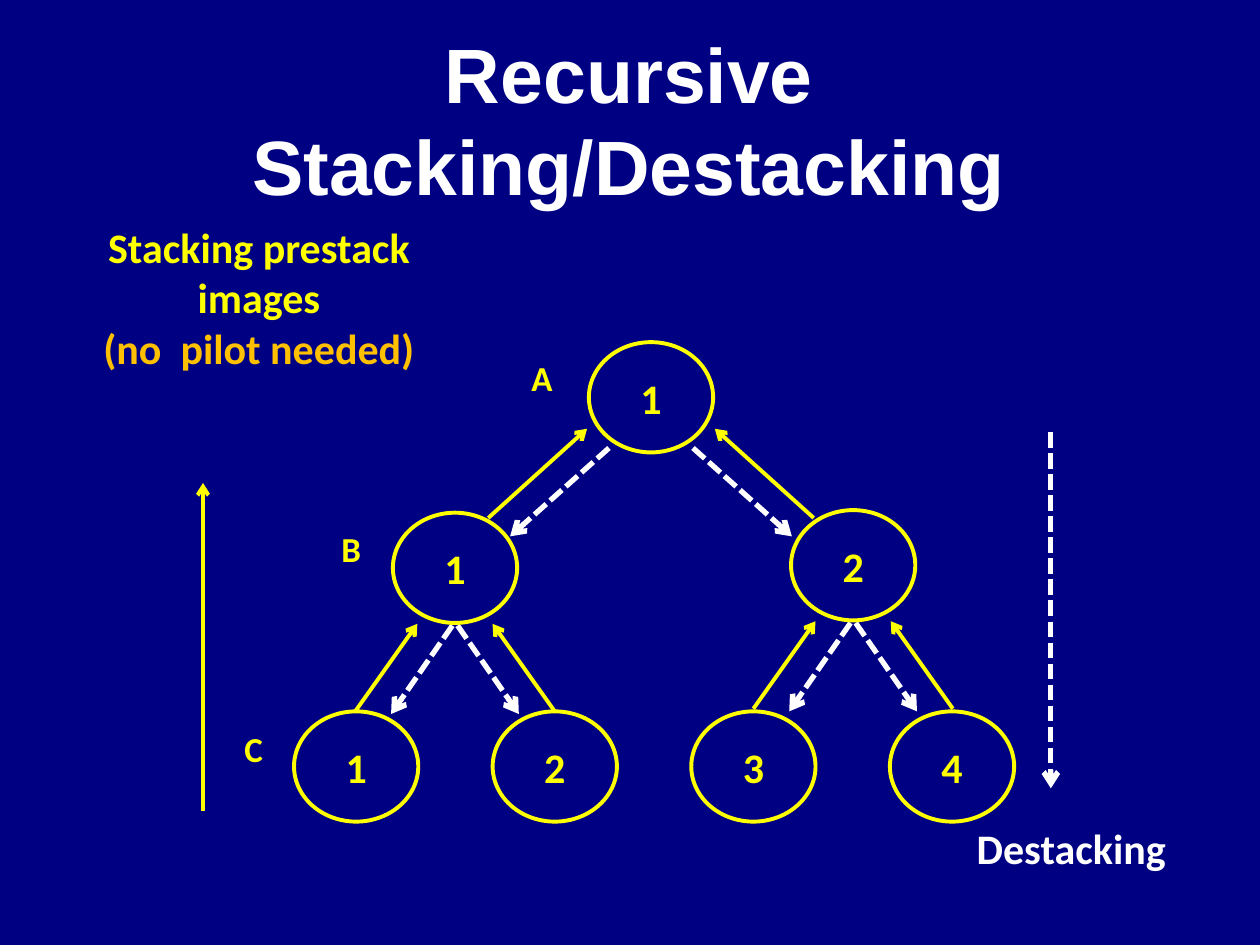
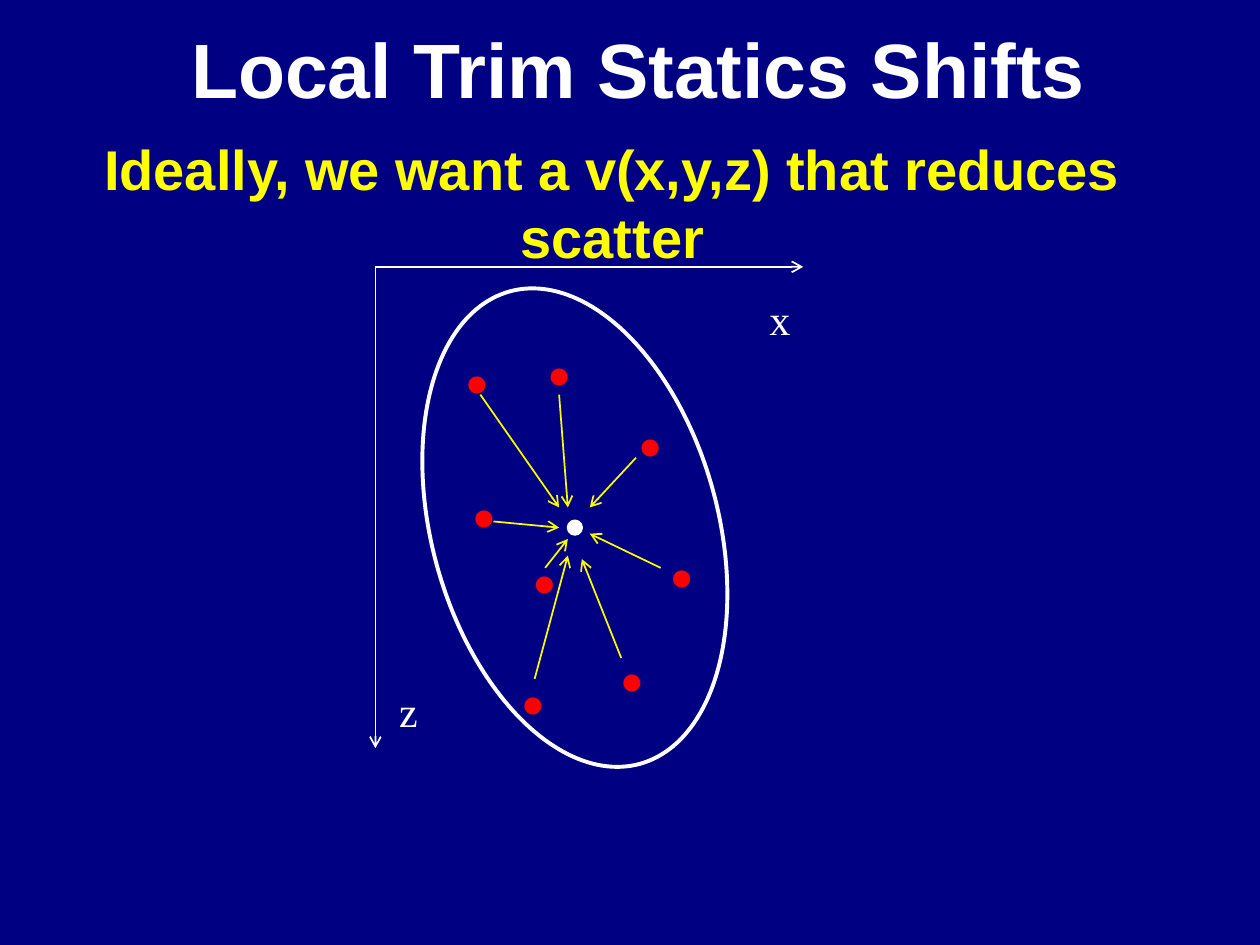
import pptx
import pptx.dml.color
import pptx.enum.dml
import pptx.enum.shapes
import pptx.enum.text
import pptx.oxml.ns
import pptx.util
from lxml import etree

Pt = pptx.util.Pt
RGBColor = pptx.dml.color.RGBColor
Align = pptx.enum.text.PP_ALIGN
Anchor = pptx.enum.text.MSO_ANCHOR

NAVY = RGBColor(0x00, 0x00, 0x82)
WHITE = RGBColor(0xFF, 0xFF, 0xFF)
YELLOW = RGBColor(0xFF, 0xFF, 0x00)
LEMON = RGBColor(0xFA, 0xFD, 0x00)
AMBER = RGBColor(0xFF, 0xC0, 0x00)
RED = RGBColor(0xFF, 0x00, 0x00)

TITLE_FONT, TREE_FONT, PLOT_FONT = "Arial", "Calibri", "Times New Roman"
TITLE_ONLY = 5

NODE_WIDTH, NODE_HEIGHT = 71, 63
LEVEL_A = [(372, 227)]
LEVEL_B = [(260, 324.5), (487.5, 323)]
LEVEL_C = [(203.5 + 113.5 * i, 438) for i in range(4)]

# Arrow ends as offsets from the parent's centre, for the right-hand child:
# (stacking start, stacking end, destacking start, destacking end)
A_TO_B = ((93, 69), (36.5, 18), (24, 29), (80.5, 79.5))
B_TO_C = ((57, 82), (21.5, 32), (1.5, 33), (36.5, 83.5))

# Corner of each scattered dot's text box, with its arrow's start and end
SCATTER = [
    ((305, 156), (319.5, 225.5), (324.5, 290)),
    ((258, 160.5), (274.5, 225.5), (319.5, 290)),
    ((357, 197), (363.5, 261.5), (337, 290)),
    ((262, 237.5), (282, 298), (319.5, 301.5)),
    ((375, 271.5), (377.5, 324.5), (337, 305)),
    ((296.5, 275), (311.5, 324.5), (324.5, 308)),
    ((290, 344), (305.5, 388), (324.5, 317.5)),
    ((346.5, 331), (355, 376), (332.5, 319.5)),
]


def style(paragraph, font_name, size, color, bold=True, align=Align.LEFT):
    paragraph.alignment = align
    font = paragraph.font
    font.name, font.size, font.bold = font_name, Pt(size), bold
    font.color.rgb = color


def add_titled_slide(prs, title_text, left, top, width, height):
    slide = prs.slides.add_slide(prs.slide_layouts[TITLE_ONLY])
    title = slide.shapes.title
    title.left, title.top, title.width, title.height = map(Pt, (left, top, width, height))
    title.text = title_text
    title.text_frame.auto_size = pptx.enum.text.MSO_AUTO_SIZE.NONE
    title.text_frame.vertical_anchor = Anchor.MIDDLE
    style(title.text_frame.paragraphs[0], TITLE_FONT, 44, WHITE, align=Align.CENTER)
    return slide


def add_label(slide, text, left, top, width, height, font_name, size, color,
              bold=True, align=Align.LEFT, wrap=False):
    """Add a text box with one paragraph for each line of text; return its frame."""
    frame = slide.shapes.add_textbox(*map(Pt, (left, top, width, height))).text_frame
    frame.text = text
    frame.word_wrap = wrap
    for paragraph in frame.paragraphs:
        style(paragraph, font_name, size, color, bold, align)
    return frame


def add_arrow(slide, start, end, color, width, dashed=False):
    arrow = slide.shapes.add_connector(
        pptx.enum.shapes.MSO_CONNECTOR.STRAIGHT, *map(Pt, (*start, *end)))
    arrow.line.color.rgb = color
    arrow.line.width = Pt(width)
    if dashed:
        arrow.line.dash_style = pptx.enum.dml.MSO_LINE.SQUARE_DOT
    qn = pptx.oxml.ns.qn
    etree.SubElement(arrow.get_or_add_ln(), qn("a:tailEnd"), type="arrow")
    etree.SubElement(arrow.element.spPr, qn("a:effectLst"))


def add_stacking_arrow(slide, start, end):
    add_arrow(slide, start, end, YELLOW, 2.25)


def add_destacking_arrow(slide, start, end):
    add_arrow(slide, start, end, WHITE, 3, dashed=True)


def add_ellipse(slide, center, width, height, color, filled=False):
    x, y = center
    ellipse = slide.shapes.add_shape(
        pptx.enum.shapes.MSO_SHAPE.OVAL,
        *map(Pt, (x - width / 2, y - height / 2, width, height)))
    ellipse.shadow.inherit = False
    ellipse.line.color.rgb = color
    ellipse.line.width = Pt(2.25)
    if filled:
        ellipse.fill.solid()
        ellipse.fill.fore_color.rgb = color
    else:
        ellipse.fill.background()
    return ellipse


def add_node(slide, center, number):
    node = add_ellipse(slide, center, NODE_WIDTH, NODE_HEIGHT, YELLOW)
    node.text_frame.text = str(number)
    node.text_frame.vertical_anchor = Anchor.MIDDLE
    style(node.text_frame.paragraphs[0], TREE_FONT, 24, YELLOW, align=Align.CENTER)


def add_branches(slide, parent, offsets):
    """Draw the arrow pairs between a parent and its two mirrored children."""
    x, y = parent
    for side in (-1, 1):
        up_from, up_to, down_from, down_to = [(x + side * dx, y + dy) for dx, dy in offsets]
        add_destacking_arrow(slide, down_from, down_to)
        add_stacking_arrow(slide, up_from, up_to)


def build_stacking_tree(prs):
    slide = add_titled_slide(prs, "Recursive Stacking/Destacking", 52.5, 11.5, 614, 113)

    for parents, offsets in ((LEVEL_A, A_TO_B), (LEVEL_B, B_TO_C)):
        for parent in parents:
            add_branches(slide, parent, offsets)
    for level in (LEVEL_A, LEVEL_B, LEVEL_C):
        for number, center in enumerate(level, start=1):
            add_node(slide, center, number)
    for letter, left, top in (("A", 296.5, 200), ("B", 188, 298), ("C", 132.5, 412)):
        add_label(slide, letter, left, top, 26, 32, TREE_FONT, 20, YELLOW)

    stacking = add_label(slide, "Stacking prestack images\n(no  pilot needed)",
                         34.5, 123, 227, 94, TREE_FONT, 24, YELLOW,
                         align=Align.CENTER, wrap=True)
    stacking.paragraphs[1].font.color.rgb = AMBER
    add_stacking_arrow(slide, (116, 463.5), (116, 276))
    add_destacking_arrow(slide, (600.5, 247), (600.5, 450.5))
    add_label(slide, "Destacking", 551, 466.5, 124.5, 36, TREE_FONT, 24, WHITE)


def build_trim_statics(prs):
    slide = add_titled_slide(prs, "Local Trim Statics Shifts", 22.5, 8.5, 685, 60)
    add_label(slide, "Ideally, we want a v(x,y,z) that reduces\nscatter",
              50.5, 73.5, 599, 85, TITLE_FONT, 32, YELLOW, align=Align.CENTER)

    scatter_outline = add_ellipse(slide, (328.5, 301.5), 163.5, 280, WHITE)
    scatter_outline.rotation = 344.6
    for (left, top), start, end in SCATTER:
        add_label(slide, ".", left, top, 40, 80, PLOT_FONT, 60, RED, wrap=True)
        add_arrow(slide, start, end, LEMON, 1)
    add_ellipse(slide, (328.5, 301.5), 7, 7, WHITE, filled=True)

    origin = (214.5, 152.5)
    add_arrow(slide, origin, (459, 152.5), WHITE, 1)
    add_arrow(slide, origin, (214.5, 427.5), WHITE, 1)
    for axis, left, top in (("x", 432.5, 164), ("z", 221, 388)):
        add_label(slide, axis, left, top, 26, 36, PLOT_FONT, 24, WHITE, bold=False)


def main():
    prs = pptx.Presentation()
    prs.slide_width, prs.slide_height = Pt(720), Pt(540)
    backdrop = prs.slide_master.background.fill
    backdrop.solid()
    backdrop.fore_color.rgb = NAVY
    build_stacking_tree(prs)
    build_trim_statics(prs)
    prs.save("out.pptx")


if __name__ == "__main__":
    main()
